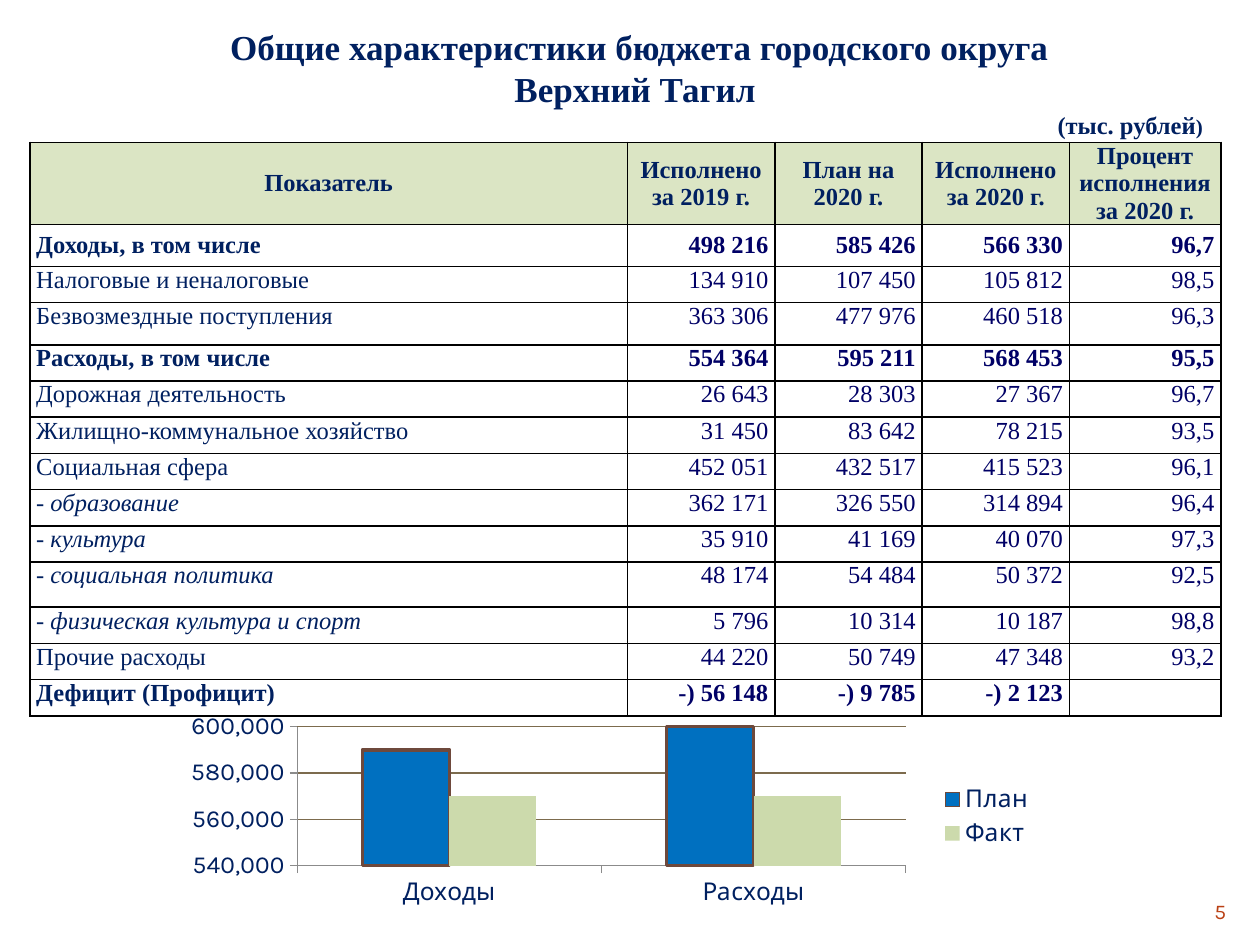
from lxml import etree
from pptx import Presentation, util as u
from pptx.chart.data import CategoryChartData
from pptx.dml.color import RGBColor
from pptx.enum import chart as ch, text as tx
from pptx.oxml import parse_xml
from pptx.oxml.ns import nsdecls, qn

SERIF, SANS = "Times New Roman", "Karla"
NAVY, INK, GREEN, BROWN = "002060", "000066", "CCDAAC", "6E493C"
MID, RIGHT, LEFT = tx.PP_ALIGN.CENTER, tx.PP_ALIGN.RIGHT, tx.PP_ALIGN.LEFT
COLS = [12.05, 2.97, 2.97, 2.97, 3.05]
HEADS = ["Показатель", "Исполнено за 2019 г.", "План на 2020 г.",
         "Исполнено за 2020 г.", "Процент исполнения за 2020 г."]
ROWS = [
    ("Доходы, в том числе", "498 216", "585 426", "566 330", "96,7"),
    ("Налоговые и неналоговые", "134 910", "107 450", "105 812", "98,5"),
    ("Безвозмездные поступления", "363 306", "477 976", "460 518", "96,3"),
    ("Расходы, в том числе", "554 364", "595 211", "568 453", "95,5"),
    ("Дорожная деятельность", "26 643", "28 303", "27 367", "96,7"),
    ("Жилищно-коммунальное хозяйство", "31 450", "83 642", "78 215", "93,5"),
    ("Социальная сфера", "452 051", "432 517", "415 523", "96,1"),
    ("- образование", "362 171", "326 550", "314 894", "96,4"),
    ("- культура", "35 910", "41 169", "40 070", "97,3"),
    ("- социальная политика", "48 174", "54 484", "50 372", "92,5"),
    ("- физическая культура и спорт", "5 796", "10 314", "10 187", "98,8"),
    ("Прочие расходы", "44 220", "50 749", "47 348", "93,2"),
    ("Дефицит (Профицит)", "-) 56 148", "-) 9 785", "-) 2 123", ""),
]
BOLD = {0, 3, 12}
TALL = {0: 0.85, 2: 0.85, 9: 0.91}


def rgb(code):
    """Turn a hex string into a colour."""
    return RGBColor.from_string(code)


def style(font, size, code, name=SERIF, bold=False, slant=False):
    """Set the look of a font."""
    font.size, font.name = u.Pt(size), name
    font.bold, font.italic = bold, slant
    font.color.rgb = rgb(code)


def place(shape, box):
    """Move a shape to a box given in centimetres."""
    shape.left, shape.top, shape.width, shape.height = map(u.Cm, box)


def add_title(slide, box):
    """Fill the title with two heading lines and the unit."""
    title = slide.shapes.title
    place(title, box)
    frame = title.text_frame
    frame.text = ("Общие характеристики бюджета городского округа\n"
                  "Верхний Тагил \n(тыс. рублей")
    frame.word_wrap = True
    frame.auto_size = tx.MSO_AUTO_SIZE.SHAPE_TO_FIT_TEXT
    frame.vertical_anchor = tx.MSO_ANCHOR.TOP
    for para, size, side in zip(frame.paragraphs, (20, 20, 14), (MID, MID, RIGHT)):
        para.alignment = side
        style(para.runs[0].font, size, NAVY, bold=True)
    tail = frame.paragraphs[-1].add_run()
    tail.text = ") "
    style(tail.font, 12, NAVY, bold=True)


def edge(cell):
    """Draw a thin black line on each side of a cell."""
    props = cell._tc.get_or_add_tcPr()
    for spot, side in enumerate(("lnL", "lnR", "lnT", "lnB")):
        props.insert(spot, parse_xml(
            f'<a:{side} {nsdecls("a")} w="12700"><a:solidFill>'
            f'<a:srgbClr val="000000"/></a:solidFill></a:{side}>'))


def fill_cell(cell, words, side, code, bold=False, slant=False, mid=False):
    """Write and format one cell."""
    cell.margin_left = cell.margin_right = u.Cm(0.13)
    cell.margin_top = cell.margin_bottom = 0
    cell.vertical_anchor = tx.MSO_ANCHOR.MIDDLE if mid else tx.MSO_ANCHOR.TOP
    para = cell.text_frame.paragraphs[0]
    para.alignment = side
    if words:
        run = para.add_run()
        run.text = words
        style(run.font, 14, code, bold=bold, slant=slant)
    else:
        etree.SubElement(para._p, qn("a:endParaRPr")).set("sz", "1400")
    cell.fill.background()
    edge(cell)


def add_budget(slide, box):
    """Build the budget table."""
    grid = slide.shapes.add_table(len(ROWS) + 1, len(COLS), *map(u.Cm, box)).table
    grid.first_row = grid.horz_banding = False
    for col, width in zip(grid.columns, COLS):
        col.width = u.Cm(width)
    grid.rows[0].height = u.Cm(1.27)
    for c, head in enumerate(HEADS):
        cell = grid.cell(0, c)
        fill_cell(cell, head, MID, NAVY, bold=True, mid=True)
        cell.text_frame.paragraphs[0].line_spacing = u.Pt(15.6)
        cell.fill.solid()
        cell.fill.fore_color.rgb = rgb(GREEN)
        tint = cell._tc.tcPr.find(qn("a:solidFill"))[0]
        etree.SubElement(tint, qn("a:alpha")).set("val", "70000")
    for r, row in enumerate(ROWS):
        grid.rows[r + 1].height = u.Cm(TALL.get(r, 0.73))
        for c, words in enumerate(row):
            fill_cell(grid.cell(r + 1, c), words, RIGHT if c else LEFT,
                      INK if c else NAVY, bold=r in BOLD,
                      slant=not c and words.startswith("- "), mid=r == 0)


def add_bars(slide, box):
    """Chart planned against actual totals."""
    data = CategoryChartData(number_format="#,##0")
    data.categories = ["Доходы", "Расходы"]
    data.add_series("План", (590000, 600000))
    data.add_series("Факт", (570000, 570000))
    chart = slide.shapes.add_chart(ch.XL_CHART_TYPE.COLUMN_CLUSTERED,
                                   *map(u.Cm, box), data).chart
    style(chart.font, 18, "704A3D", SANS)
    chart.has_title = False
    chart.has_legend = True
    key = chart.legend
    key.position, key.include_in_layout = ch.XL_LEGEND_POSITION.RIGHT, False
    cats, vals = chart.category_axis, chart.value_axis
    for part in (key.font, cats.tick_labels.font, vals.tick_labels.font):
        style(part, 14, NAVY, SANS)
    for axis in (cats, vals):
        axis.major_tick_mark = ch.XL_TICK_MARK.OUTSIDE
        axis.format.line.color.rgb = rgb("8B8B8B")
    vals.minimum_scale, vals.maximum_scale, vals.major_unit = 540000, 600000, 20000
    vals.tick_labels.number_format = "#,##0"
    vals.tick_labels.number_format_is_linked = False
    rule = vals.major_gridlines.format.line
    rule.color.rgb, rule.width = rgb("7C6B4D"), u.Pt(0.75)
    plot = chart.plots[0]
    plot.gap_width, plot.overlap, plot.vary_by_categories = 150, 0, False
    for bars, code in zip(plot.series, ("0070C0", GREEN)):
        bars.format.fill.solid()
        bars.format.fill.fore_color.rgb = rgb(code)
        bars.format.line.fill.background()
    rim = plot.series[0].format.line
    rim.color.rgb, rim.width = rgb(BROWN), u.Pt(2)
    area = chart._chartSpace.chart.plotArea
    for old in area.findall(qn("c:layout")):
        area.remove(old)
    sizes = "".join(f'<c:{tag} val="{val}"/>' for tag, val in
                    (("x", 0.175), ("y", 0.09), ("w", 0.67), ("h", 0.635)))
    area.insert(0, parse_xml(
        f'<c:layout {nsdecls("c")}><c:manualLayout><c:layoutTarget val="inner"/>'
        f'<c:xMode val="edge"/><c:yMode val="edge"/>{sizes}'
        '</c:manualLayout></c:layout>'))


def add_number(slide, box):
    """Put the page number in the corner."""
    frame = slide.shapes.add_textbox(*map(u.Cm, box)).text_frame
    frame.word_wrap = True
    frame.vertical_anchor = tx.MSO_ANCHOR.MIDDLE
    frame.text = "5"
    para = frame.paragraphs[0]
    para.alignment = RIGHT
    style(para.runs[0].font, 12, "BA4014", SANS)


def main():
    """Build and save the slide."""
    deck = Presentation()
    deck.slide_width, deck.slide_height = u.Cm(25.4), u.Cm(19.05)
    slide = deck.slides.add_slide(deck.slide_layouts[5])
    add_number(slide, (22.86, 18.02, 2.11, 0.69))
    add_bars(slide, (2.79, 14.25, 18.31, 4.42))
    add_budget(slide, (0.6, 2.87, 24.01, 11.63))
    add_title(slide, (1.17, 0.39, 23.44, 2.57))
    deck.save("out.pptx")


if __name__ == "__main__":
    main()
